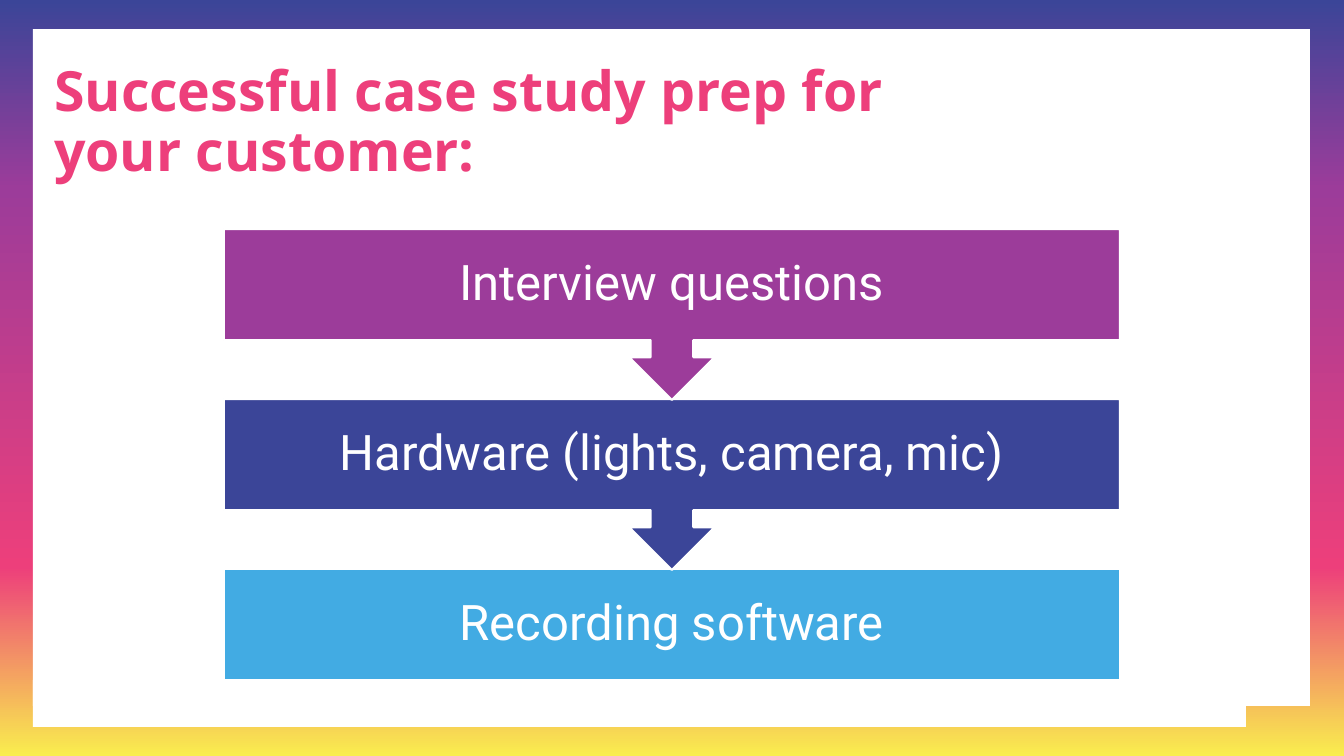
from dataclasses import dataclass

from lxml.etree import SubElement
from pptx import Presentation
from pptx.dml.color import RGBColor
from pptx.enum.shapes import MSO_SHAPE as Preset
from pptx.enum.text import MSO_ANCHOR as Anchor, PP_ALIGN as Align
from pptx.oxml.ns import qn
from pptx.util import Emu, Pt

EMU_PER_PX = 914400 / 100.8
PAGE_WIDTH, PAGE_HEIGHT = 1344, 756


@dataclass(frozen=True)
class Theme:
    white: str = "FFFFFF"
    pink: str = "ED3F7B"
    purple: str = "9C3C9A"
    indigo: str = "3B4598"
    sky: str = "42ABE3"
    yellow: str = "F9ED4E"
    title_font: str = "Open Sans"
    body_font: str = "Roboto"
    title_size: float = 39.6
    step_size: int = 35
    outline: float = 1.5


THEME = Theme()
FRAME_STOPS = ((0, THEME.indigo), (25, THEME.purple), (75, THEME.pink), (100, THEME.yellow))
STEPS = (
    ("Interview questions", THEME.purple),
    ("Hardware (lights, camera, mic)", THEME.indigo),
    ("Recording software", THEME.sky),
)
STEP_LEFT, STEP_TOP, STEP_WIDTH = 224, 229, 896
STEP_PITCH, BOX_HEIGHT, CALLOUT_HEIGHT = 170, 111, 171
STEP_INSET = 27


def px(length):
    return Emu(round(length * EMU_PER_PX))


def set_font(para, name, size, color, bold=False):
    font = para.font
    font.name, font.size, font.bold = name, Pt(size), bold
    font.color.rgb = RGBColor.from_string(color)


def add_block(page, preset, left, top, width, height, color):
    block = page.shapes.add_shape(preset, px(left), px(top), px(width), px(height))
    block.shadow.inherit = False
    block.fill.solid()
    block.fill.fore_color.rgb = RGBColor.from_string(color)
    block.line.fill.background()
    return block


def set_vertical_gradient(shape, stops):
    """Fill from top to bottom with (percent, colour) stops."""
    shape.fill.gradient()
    gradient = shape.element.spPr.find(qn("a:gradFill"))
    stop_list = gradient.find(qn("a:gsLst"))
    for old_stop in list(stop_list):
        stop_list.remove(old_stop)
    for percent, color in stops:
        stop = SubElement(stop_list, qn("a:gs"), pos=str(percent * 1000))
        SubElement(stop, qn("a:srgbClr"), val=color)
    direction = gradient.find(qn("a:lin"))
    direction.set("ang", "5400000")
    direction.set("scaled", "0")


def add_frame(page):
    border = add_block(page, Preset.RECTANGLE, 0, 0, PAGE_WIDTH, PAGE_HEIGHT, THEME.indigo)
    set_vertical_gradient(border, FRAME_STOPS)
    add_block(page, Preset.RECTANGLE, 33, 29, 1277, 677, THEME.white)
    add_block(page, Preset.RECTANGLE, 33, 680, 1213, 47, THEME.white)


def add_title(page, text):
    """Fill the title placeholder and bring it in front of the frame."""
    title = page.shapes.title
    title.left, title.top, title.width, title.height = px(44), px(75), px(1255), px(97)
    frame = title.text_frame
    frame.text = text
    frame.vertical_anchor = Anchor.MIDDLE
    para = frame.paragraphs[0]
    para.alignment = Align.LEFT
    para.line_spacing = 0.9
    set_font(para, THEME.title_font, THEME.title_size, THEME.pink, bold=True)
    title.element.getparent().append(title.element)


def add_step(page, index, text, color, is_last):
    preset, height = (
        (Preset.RECTANGLE, BOX_HEIGHT) if is_last
        else (Preset.DOWN_ARROW_CALLOUT, CALLOUT_HEIGHT)
    )
    top = STEP_TOP + index * STEP_PITCH
    step = add_block(page, preset, STEP_LEFT, top, STEP_WIDTH, height, color)
    step.line.color.rgb = RGBColor.from_string(THEME.white)
    step.line.width = Pt(THEME.outline)
    frame = step.text_frame
    frame.word_wrap = True
    frame.vertical_anchor = Anchor.MIDDLE
    frame.margin_left = frame.margin_right = px(STEP_INSET)
    frame.margin_top = frame.margin_bottom = px(STEP_INSET)
    para = frame.paragraphs[0]
    para.text = text
    para.alignment = Align.CENTER
    para.line_spacing = 0.9
    set_font(para, THEME.body_font, THEME.step_size, THEME.white)


def main():
    deck = Presentation()
    deck.slide_width, deck.slide_height = px(PAGE_WIDTH), px(PAGE_HEIGHT)
    page = deck.slides.add_slide(deck.slide_layouts[5])
    add_frame(page)
    add_title(page, "Successful case study prep for\vyour customer:")
    last = len(STEPS) - 1
    for index, (text, color) in reversed(list(enumerate(STEPS))):
        add_step(page, index, text, color, index == last)
    deck.save("out.pptx")


if __name__ == "__main__":
    main()
